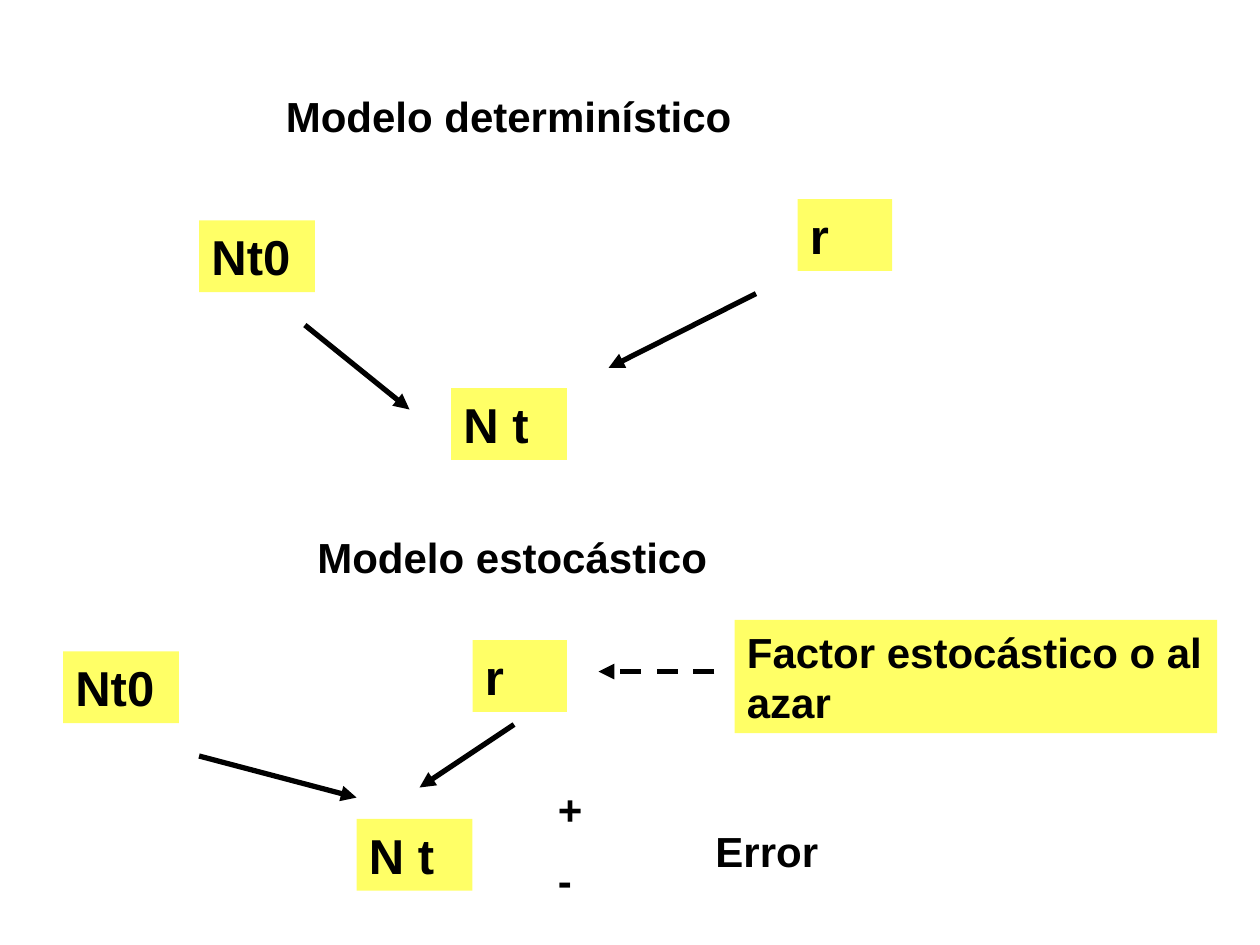
from lxml import etree
from pptx import Presentation
from pptx.dml.color import RGBColor
from pptx.enum import dml, shapes, text
from pptx.oxml.ns import qn
from pptx.util import Inches, Pt

BLACK = RGBColor(0x00, 0x00, 0x00)
WHITE = RGBColor(0xFF, 0xFF, 0xFF)
YELLOW = RGBColor(0xFF, 0xFF, 0x66)

FONT = {"name": "Arial", "bold": True}
FRAME = {"word_wrap": True, "vertical_anchor": text.MSO_ANCHOR.TOP}
NODE_H = 0.57
TITLE_H = 0.5


def add_label(s, lines, x, y, w, h, fill=WHITE, size=24):
    """Filled rectangle with one left-aligned paragraph per line."""
    sp = s.shapes.add_shape(shapes.MSO_SHAPE.RECTANGLE,
                            Inches(x), Inches(y), Inches(w), Inches(h))
    sp.shadow.inherit = False
    sp.fill.solid()
    sp.fill.fore_color.rgb = fill
    sp.line.fill.background()
    tf = sp.text_frame
    for name, value in FRAME.items():
        setattr(tf, name, value)
    for i, line in enumerate(lines):
        p = tf.paragraphs[0] if i == 0 else tf.add_paragraph()
        p.alignment = text.PP_ALIGN.LEFT
        # Space before each paragraph: half a line
        before = etree.SubElement(p._p.get_or_add_pPr(), qn("a:spcBef"))
        etree.SubElement(before, qn("a:spcPct"), val="50000")
        r = p.add_run()
        r.text = line
        for name, value in {**FONT, "size": Pt(size)}.items():
            setattr(r.font, name, value)
        r.font.color.rgb = BLACK
    return sp


def add_node(s, label, x, y, w=0.92):
    return add_label(s, [label], x, y, w, NODE_H, YELLOW, 28)


def add_arrow(s, x1, y1, x2, y2, dashed=False):
    cx = s.shapes.add_connector(shapes.MSO_CONNECTOR.STRAIGHT,
                                Inches(x1), Inches(y1), Inches(x2), Inches(y2))
    cx.line.color.rgb = BLACK
    cx.line.width = Pt(3)
    if dashed:
        cx.line.dash_style = dml.MSO_LINE.DASH
    etree.SubElement(cx.line._get_or_add_ln(), qn("a:tailEnd"), type="triangle")
    etree.SubElement(cx._element.spPr, qn("a:effectLst"))
    return cx


def deterministic_model(s, x, y):
    add_label(s, ["Modelo determinístico"], x + 0.59, y, 4.42, TITLE_H)
    # Inputs and result
    add_node(s, "Nt0", x, y + 1.08)
    add_node(s, "r", x + 4.75, y + 0.91, 0.75)
    add_node(s, "N t", x + 2, y + 2.41)
    add_arrow(s, x + 0.84, y + 1.91, x + 1.67, y + 2.58)
    add_arrow(s, x + 4.42, y + 1.66, x + 3.25, y + 2.25)


def stochastic_model(s, x, y):
    add_label(s, ["Modelo estocástico"], x + 1.92, y, 3.75, TITLE_H)
    # Inputs and result
    add_node(s, "Nt0", x, y + 1)
    add_node(s, "r", x + 3.25, y + 0.91, 0.75)
    add_node(s, "N t", x + 2.33, y + 2.33)
    add_arrow(s, x + 1.08, y + 1.83, x + 2.33, y + 2.16)
    add_arrow(s, x + 3.58, y + 1.58, x + 2.83, y + 2.08)
    # Random factor acting on r
    add_label(s, ["Factor estocástico o al azar"],
              x + 5.33, y + 0.75, 3.83, 0.9, YELLOW)
    add_arrow(s, x + 5.17, y + 1.16, x + 4.25, y + 1.16, dashed=True)
    # Error term
    add_label(s, ["+", "-"], x + 3.83, y + 2, 0.92, 1.1)
    add_label(s, ["Error"], x + 5.08, y + 2.33, 1.15, TITLE_H)


def main():
    prs = Presentation()
    prs.slide_width, prs.slide_height = Inches(10), Inches(7.5)
    s = prs.slides.add_slide(prs.slide_layouts[6])
    deterministic_model(s, 1.58, 0.67)
    stochastic_model(s, 0.5, 4.17)
    prs.save("out.pptx")


if __name__ == "__main__":
    main()
